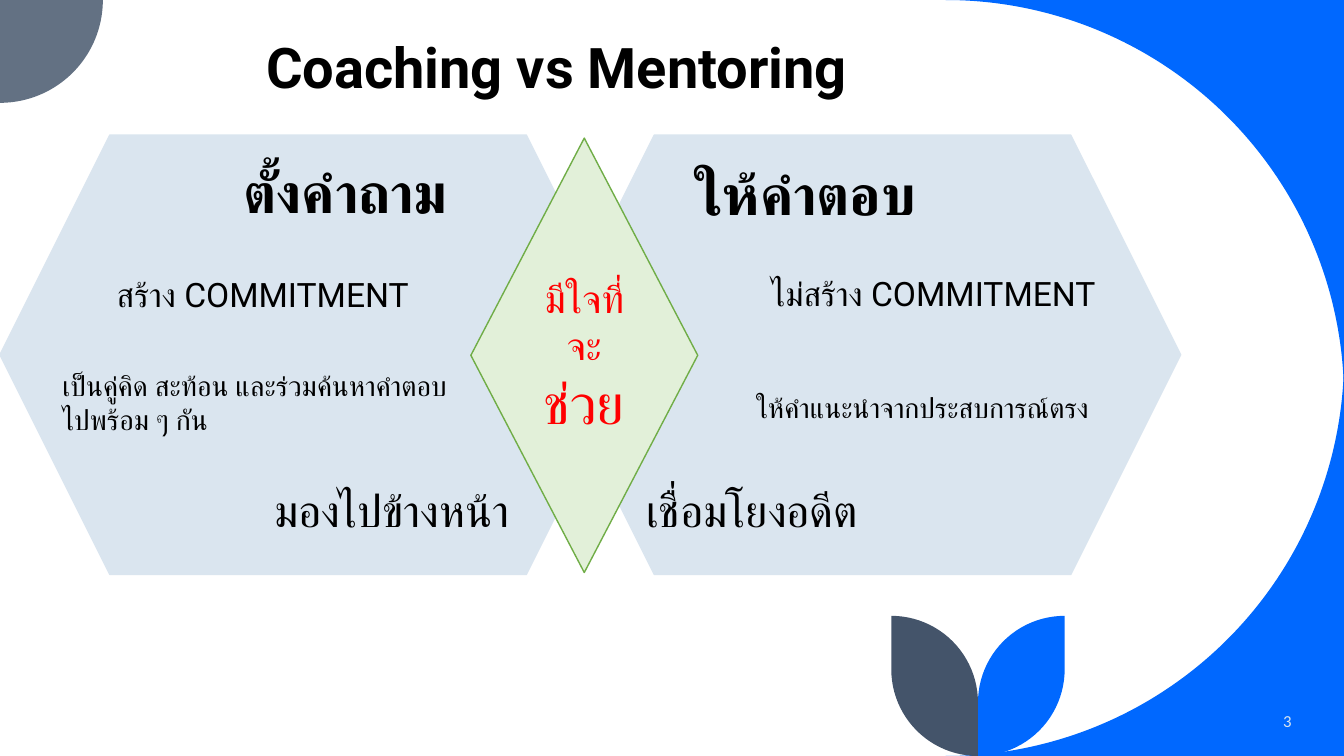
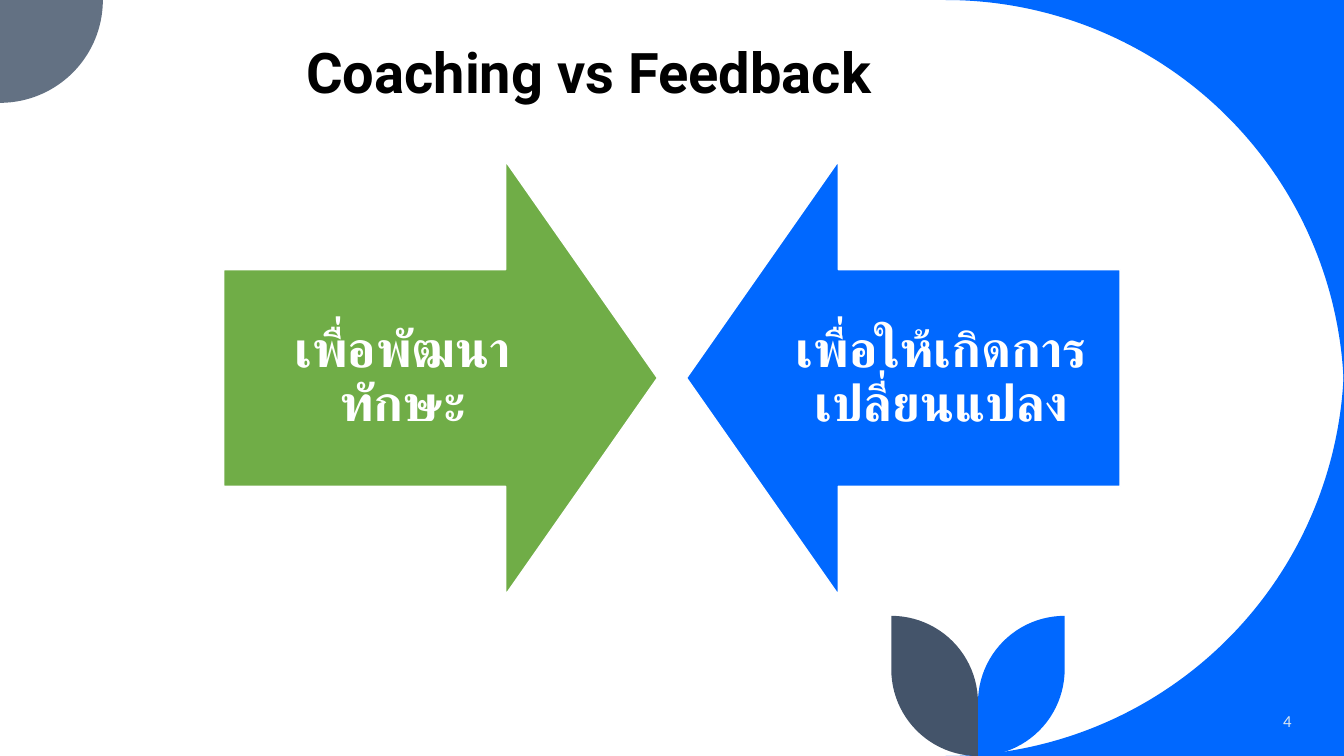
from lxml.etree import SubElement
from pptx import Presentation
from pptx.dml.color import RGBColor
from pptx.enum.shapes import MSO_SHAPE
from pptx.enum.text import MSO_ANCHOR, PP_ALIGN
from pptx.oxml.ns import qn
from pptx.util import Inches, Pt

COLORS = {
    "blue": "0068FF", "slate": "44546A", "gray": "637183", "pale": "DAE5EF",
    "green": "70AD47", "mint": "E2F0D9", "red": "FF0000",
    "black": "000000", "white": "FFFFFF",
}
FONT = "Roboto"
WIDTH, HEIGHT = 13.33, 7.5


def rgb(name):
    return RGBColor.from_string(COLORS[name])


def set_font(font, size=None, color="black", bold=False, name=FONT):
    font.name = name
    font.bold = bold
    font.color.rgb = rgb(color)
    if size:
        font.size = Pt(size)


def add_text(s, box, text, size, color="black", bold=False, name=FONT,
             align=PP_ALIGN.LEFT, anchor=MSO_ANCHOR.TOP, wrap=True):
    tf = s.shapes.add_textbox(*map(Inches, box)).text_frame
    tf.word_wrap = wrap
    tf.vertical_anchor = anchor
    p = tf.paragraphs[0]
    p.text = text
    p.alignment = align
    set_font(p.font, size, color, bold, name)


def add_shape(s, kind, box, fill, line):
    sp = s.shapes.add_shape(kind, *map(Inches, box))
    sp.shadow.inherit = False
    sp.fill.solid()
    sp.fill.fore_color.rgb = rgb(fill)
    sp.line.color.rgb = rgb(line)
    sp.line.width = Pt(1)
    tf = sp.text_frame
    tf.word_wrap = True
    tf.vertical_anchor = MSO_ANCHOR.MIDDLE
    tf.paragraphs[0].alignment = PP_ALIGN.CENTER
    return sp


def add_outline(s, points, arcs, radius, fill):
    points = [(Inches(x), Inches(y)) for x, y in points]
    builder = s.shapes.build_freeform(*points[0])
    builder.add_line_segments(points[1:], close=True)
    sp = builder.convert_to_shape()
    sp.shadow.inherit = False
    sp.fill.solid()
    sp.fill.fore_color.rgb = rgb(fill)
    sp.line.fill.background()
    lines = list(sp._element.iter(qn("a:lnTo")))
    for i, (start, sweep) in arcs.items():
        outline = lines[i - 1].getparent()
        arc = SubElement(outline, qn("a:arcTo"), wR=str(Inches(radius)),
                         hR=str(Inches(radius)), stAng=str(start * 60000),
                         swAng=str(sweep * 60000))
        outline.replace(lines[i - 1], arc)


def add_leaves(s, stem, top, w, h):
    leaf = [(w, 0), (w, h - w), (0, h), (0, w), (w, 0)]
    for side, start, fill in ((1, 0, "blue"), (-1, 180, "slate")):
        points = [(stem + side * x, top + y) for x, y in leaf]
        arcs = {2: (start, side * 90), 4: (180 - start, side * 90)}
        add_outline(s, points, arcs, w, fill)


def add_base(prs, title, title_box, number):
    s = prs.slides.add_slide(prs.slide_layouts[6])
    r, corner = 3.95, 1.02
    left = WIDTH - r
    add_outline(s, [(WIDTH, 0), (left, 0), (WIDTH, r)], {2: (270, 90)}, r, "blue")
    add_outline(s, [(WIDTH, HEIGHT - r), (left, HEIGHT), (WIDTH, HEIGHT)],
                {1: (0, 90)}, r, "blue")
    add_outline(s, [(0, 0), (corner, 0), (0, corner)], {2: (0, 90)}, corner, "gray")
    add_leaves(s, 9.7, 6.11, 0.86, 1.39)
    add_text(s, (11.1, 6.95, 1.81, 0.4), str(number), 12, "pale", name="Calibri",
             align=PP_ALIGN.RIGHT, anchor=MSO_ANCHOR.MIDDLE)
    add_text(s, title_box, title, 40, bold=True, wrap=False)
    return s


def add_panel(s, box, items):
    left, top = box[:2]
    add_shape(s, MSO_SHAPE.HEXAGON, box, "pale", "pale")
    for dx, dy, w, h, text, size in items:
        add_text(s, (left + dx, top + dy, w, h), text, size, bold=size == 40)


def add_diamond(s, box, parts):
    sp = add_shape(s, MSO_SHAPE.DIAMOND, box, "mint", "green")
    p = sp.text_frame.paragraphs[0]
    set_font(p.font, color="red")
    for text, size in parts:
        r = p.add_run()
        r.text = text
        r.font.size = Pt(size)
        r.font.color.rgb = rgb("red")


def add_arrow(s, kind, box, text, fill):
    sp = add_shape(s, kind, box, fill, "white")
    sp.adjustments[0] = 0.5
    sp.adjustments[1] = 0.35
    tf = sp.text_frame
    tf.margin_left = tf.margin_right = tf.margin_top = tf.margin_bottom = Inches(0.28)
    p = tf.paragraphs[0]
    p.text = text
    p.line_spacing = 0.9
    set_font(p.font, 36, "white", True)


def mentoring_slide(prs):
    s = add_base(prs, "Coaching vs Mentoring", (2.54, 0.27, 6.31, 0.77), 3)
    add_panel(s, (5.4, 1.34, 6.31, 4.36), [
        (1.4, 0.19, 2.61, 0.77, "ให้คำตอบ", 40),
        (2.15, 1.32, 4, 0.5, "ไม่สร้าง COMMITMENT", 24),
        (2, 2.49, 4.02, 0.44, "ให้คำแนะนำจากประสบการณ์ตรง", 20),
        (0.91, 3.4, 4, 0.64, "เชื่อมโยงอดีต", 32),
    ])
    add_panel(s, (0, 1.34, 6.31, 4.36), [
        (2.32, 0.17, 2.66, 0.77, "ตั้งคำถาม", 40),
        (1.06, 1.33, 4, 0.5, "สร้าง COMMITMENT", 24),
        (0.52, 2.27, 4.15, 0.77, "เป็นคู่คิด สะท้อน และร่วมค้นหาคำตอบไปพร้อม ๆ กัน", 20),
        (2.62, 3.4, 4, 0.64, "มองไปข้างหน้า", 32),
    ])
    add_diamond(s, (4.67, 1.37, 2.25, 4.31), [("มีใจที่จะ", 28), ("ช่วย", 40)])


def feedback_slide(prs):
    s = add_base(prs, "Coaching vs Feedback", (2.94, 0.32, 6, 0.77), 4)
    size, top = 4.3, 1.6
    add_arrow(s, MSO_SHAPE.RIGHT_ARROW, (2.22, top, size, size),
              "เพื่อพัฒนาทักษะ", "green")
    add_arrow(s, MSO_SHAPE.LEFT_ARROW, (6.81, top, size, size),
              "เพื่อให้เกิดการเปลี่ยนแปลง", "blue")


def main():
    prs = Presentation()
    prs.slide_width = Inches(WIDTH)
    prs.slide_height = Inches(HEIGHT)
    mentoring_slide(prs)
    feedback_slide(prs)
    prs.save("out.pptx")


if __name__ == "__main__":
    main()
